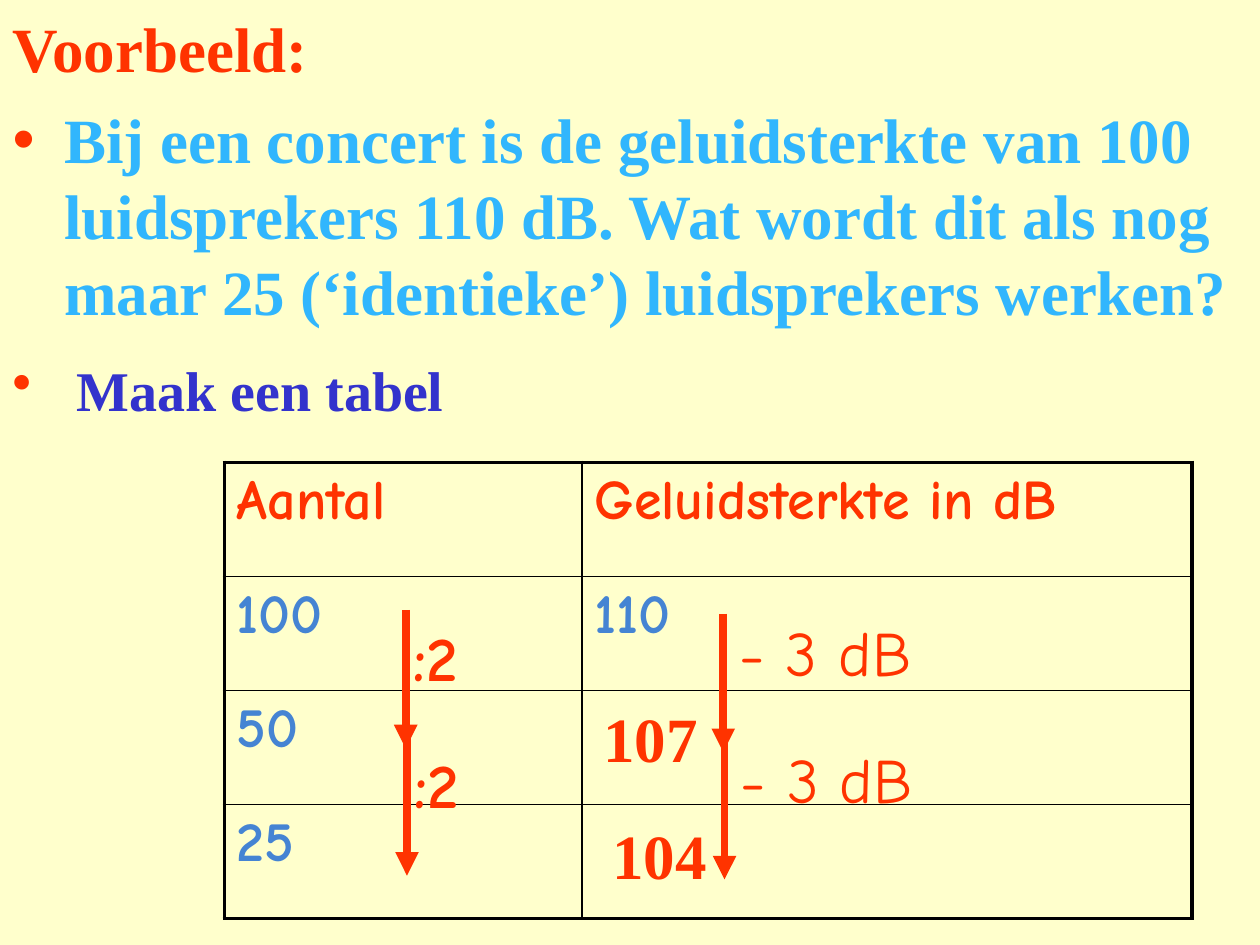
import lxml.etree
import pptx
import pptx.dml.color
import pptx.enum.shapes
import pptx.enum.text
import pptx.oxml.ns
import pptx.util

THEME = {
    "background": "FFFFCC", "accent": "FF3300", "question": "31B6FD",
    "task": "3333CC", "value": "4584D3", "border": "000000",
    "serif": "Times New Roman", "comic": "Comic Neue", "large": 36, "medium": 32,
}
color = pptx.dml.color.RGBColor.from_string
qn = pptx.oxml.ns.qn

presentation = pptx.Presentation()
presentation.slide_width = pptx.util.Inches(10)
presentation.slide_height = pptx.util.Inches(7.5)
# Grid of 100 columns by 75 rows
COLUMN = presentation.slide_width / 100
ROW = presentation.slide_height / 75


def box(left, top, width, height):
    return [int(left * COLUMN), int(top * ROW), int(width * COLUMN), int(height * ROW)]


def write(text_frame, text, size, font, ink, bold=True, bullet_indent=None):
    text_frame.text = text
    text_frame.word_wrap = True
    paragraph = text_frame.paragraphs[0]
    paragraph.alignment = pptx.enum.text.PP_ALIGN.LEFT
    run_font = paragraph.runs[0].font
    run_font.size = pptx.util.Pt(THEME[size])
    run_font.name = THEME[font]
    run_font.bold = bold
    run_font.color.rgb = color(THEME[ink])
    if bullet_indent:
        properties = paragraph._p.get_or_add_pPr()
        properties.set("marL", str(int(bullet_indent * COLUMN)))
        properties.set("indent", str(int(-bullet_indent * COLUMN)))
        bullet_color = lxml.etree.SubElement(properties, qn("a:buClr"))
        lxml.etree.SubElement(bullet_color, qn("a:srgbClr"), val=THEME["accent"])
        lxml.etree.SubElement(properties, qn("a:buChar"), char="•")


slide = presentation.slides.add_slide(presentation.slide_layouts[0])
slide.background.fill.solid()
slide.background.fill.fore_color.rgb = color(THEME["background"])

# Title and question
title, question = slide.placeholders
title.left, title.top, title.width, title.height = box(0, 0, 100, 7.5)
question.left, question.top, question.width, question.height = box(0, 7.5, 100, 24.2)
write(title.text_frame, "Voorbeeld:", "large", "serif", "accent")
write(question.text_frame,
      "Bij een concert is de geluidsterkte van 100 luidsprekers 110 dB. "
      "Wat wordt dit als nog maar 25 (‘identieke’) luidsprekers werken?",
      "large", "serif", "question", bullet_indent=4.1)
title.text_frame.vertical_anchor = pptx.enum.text.MSO_ANCHOR.MIDDLE
question.text_frame.vertical_anchor = pptx.enum.text.MSO_ANCHOR.TOP
for placeholder in (title, question):
    placeholder.text_frame.auto_size = pptx.enum.text.MSO_AUTO_SIZE.NONE

# Task
task = slide.shapes.add_textbox(*box(0, 27.7, 100, 7.1))
write(task.text_frame, "Maak een tabel", "medium", "serif", "task", bullet_indent=5.1)

# Table with a heavy frame and thin inner lines
cells = [["Aantal", "Geluidsterkte in dB"], ["100", "110"], ["50", ""], ["25", ""]]
last_row, last_column = len(cells) - 1, len(cells[0]) - 1
table = slide.shapes.add_table(len(cells), len(cells[0]),
                               *box(17.8, 36.7, 76.8, 36.2)).table
table.first_row = table.horz_banding = False
for table_column, width in zip(table.columns, (28.4, 48.4)):
    table_column.width = int(width * COLUMN)
for row_number, texts in enumerate(cells):
    for column_number, text in enumerate(texts):
        cell = table.cell(row_number, column_number)
        if text:
            write(cell.text_frame, text, "medium", "comic",
                  "value" if row_number else "accent")
        properties = cell._tc.get_or_add_tcPr()
        edges = {"a:lnL": column_number == 0, "a:lnR": column_number == last_column,
                 "a:lnT": row_number == 0, "a:lnB": row_number == last_row}
        for edge, outer in edges.items():
            line = lxml.etree.SubElement(properties, qn(edge),
                                         w=str(pptx.util.Pt(2.25 if outer else 1)))
            fill = lxml.etree.SubElement(line, qn("a:solidFill"))
            lxml.etree.SubElement(fill, qn("a:srgbClr"), val=THEME["border"])
        cell.fill.background()

# Answers in the table
for text, left, top in (("107", 46.9, 55), ("104", 47.6, 64.3)):
    answer = slide.shapes.add_textbox(*box(left, top, 11.8, 6.3))
    write(answer.text_frame, text, "large", "serif", "accent")

# Two steps down, each an arrow with its label in both columns
steps = [(":2", 32.2, 48.4, -0.4, 0.2, 8.7, True),
         ("- 3 dB", 57.4, 48.7, 0.3, -0.5, 18.1, False)]
for step in range(2):
    for text, x, y, label_x, label_y, label_width, bold in steps:
        left, top = x + 0.1 * step, y + 10.1 * step
        group = slide.shapes.add_group_shape()
        start_x, start_y, _, length = box(left, top, 0, 11)
        arrow = group.shapes.add_connector(pptx.enum.shapes.MSO_CONNECTOR.STRAIGHT,
                                           start_x, start_y, start_x, start_y + length)
        arrow.line.color.rgb = color(THEME["accent"])
        arrow.line.width = pptx.util.Pt(4.5)
        lxml.etree.SubElement(arrow.line._get_or_add_ln(), qn("a:tailEnd"), type="triangle")
        lxml.etree.SubElement(arrow._element.spPr, qn("a:effectLst"))
        label = group.shapes.add_textbox(*box(left + label_x, top + label_y, label_width, 6.3))
        write(label.text_frame, text, "large", "comic", "accent", bold)

presentation.save("out.pptx")
